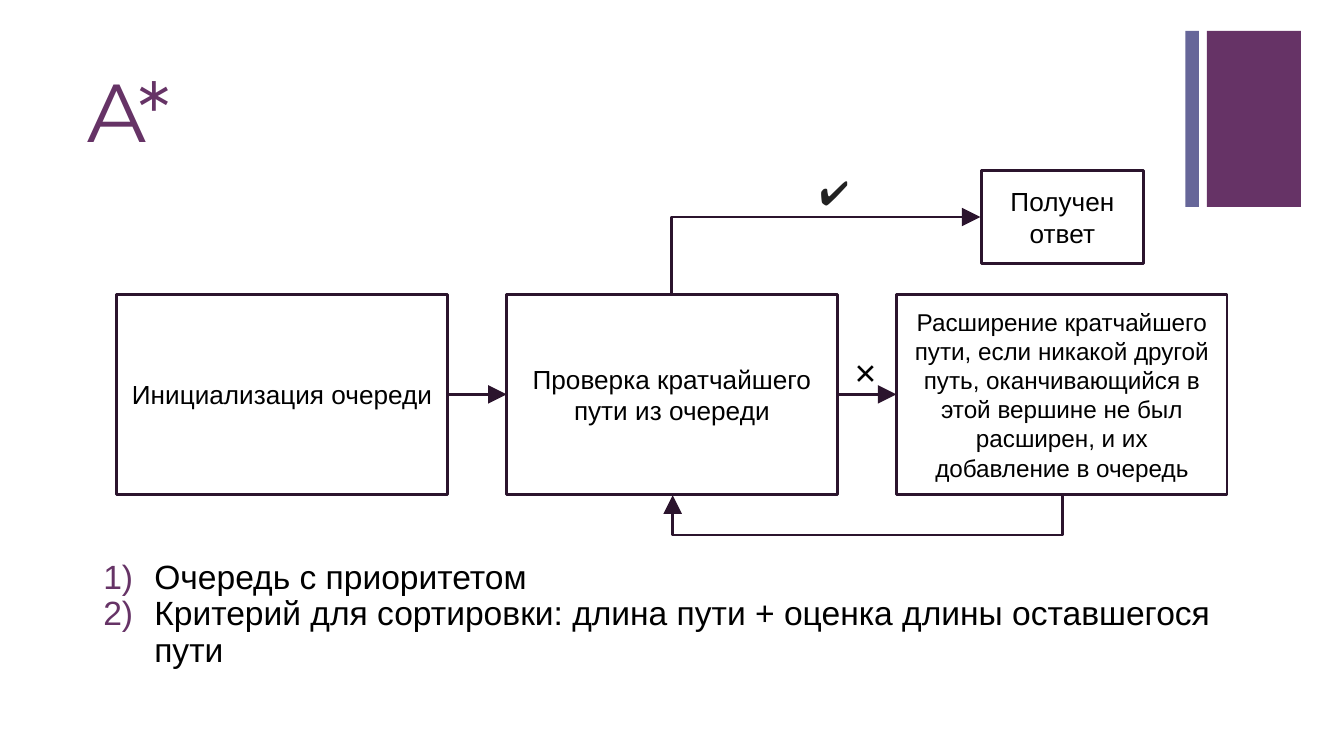
from dataclasses import dataclass
from typing import Optional

import lxml.etree
import pptx
import pptx.dml.color
import pptx.enum.shapes
import pptx.enum.text
import pptx.oxml.ns
import pptx.util

Inches = pptx.util.Inches
qn = pptx.oxml.ns.qn
CONNECTOR = pptx.enum.shapes.MSO_CONNECTOR
ANCHOR = pptx.enum.text.MSO_ANCHOR
CENTER = pptx.enum.text.PP_ALIGN.CENTER

COLORS = {"accent": "663366", "side": "666699", "outline": "2B142D",
          "text": "000000", "check": "222222", "paper": "FFFFFF"}
TOP, LEFT, BOTTOM, RIGHT = range(4)  # connection sites of a rectangle
STEP_LEFT, STEP_PITCH, STEP_TOP, STEP_WIDTH, STEP_HEIGHT = 0.87, 2.9, 2.19, 2.46, 1.49


@dataclass
class Box:
    left: float
    top: float
    width: float
    height: float
    fill: str = "paper"
    outline: Optional[str] = None
    text: str = ""
    size: int = 14


@dataclass
class Label:
    left: float
    top: float
    width: float
    height: float
    text: str
    size: int
    color: str = "text"
    font: str = "Arial"
    anchor: ANCHOR = ANCHOR.TOP
    spacing: float = 1.0


@dataclass
class Elbow:
    """Frame of a bent connector before its rotation."""
    left: float
    top: float
    width: float
    height: float
    rotation: int
    preset: str
    bend: Optional[float] = None  # position of the bend, in frame widths


def rgb(name: str) -> pptx.dml.color.RGBColor:
    return pptx.dml.color.RGBColor.from_string(COLORS[name])


def write_text(shape, text: str, size: int, color: str, font: str = "Arial") -> None:
    frame = shape.text_frame
    frame.word_wrap = True
    frame.margin_left = frame.margin_right = Inches(0.1)
    frame.margin_top = frame.margin_bottom = Inches(0.1)
    frame.text = text
    for paragraph in frame.paragraphs:
        for run in paragraph.runs:
            run.font.size = pptx.util.Pt(size)
            run.font.name = font
            run.font.color.rgb = rgb(color)


def draw_box(slide, box: Box):
    shape = slide.shapes.add_shape(
        pptx.enum.shapes.MSO_SHAPE.RECTANGLE, Inches(box.left), Inches(box.top),
        Inches(box.width), Inches(box.height))
    shape.shadow.inherit = False
    shape.fill.solid()
    shape.fill.fore_color.rgb = rgb(box.fill)
    if box.outline:
        shape.line.color.rgb = rgb(box.outline)
        shape.line.width = pptx.util.Pt(1.5)
    else:
        shape.line.fill.background()
    if box.text:
        write_text(shape, box.text, box.size, "text")
        shape.text_frame.vertical_anchor = ANCHOR.MIDDLE
        shape.text_frame.paragraphs[0].alignment = CENTER
    return shape


def draw_label(slide, label: Label):
    shape = slide.shapes.add_textbox(Inches(label.left), Inches(label.top),
                                     Inches(label.width), Inches(label.height))
    write_text(shape, label.text, label.size, label.color, label.font)
    shape.text_frame.vertical_anchor = label.anchor
    for paragraph in shape.text_frame.paragraphs:
        paragraph.line_spacing = label.spacing
    return shape


def draw_arrow(slide, start, start_site: int, end, end_site: int,
               elbow: Optional[Elbow] = None) -> None:
    kind = CONNECTOR.ELBOW if elbow else CONNECTOR.STRAIGHT
    connector = slide.shapes.add_connector(kind, 0, 0, 0, 0)
    connector.begin_connect(start, start_site)
    connector.end_connect(end, end_site)
    connector.line.color.rgb = rgb("outline")
    connector.line.width = pptx.util.Pt(1.5)
    properties = connector._element.spPr
    line = properties.find(qn("a:ln"))
    lxml.etree.SubElement(line, qn("a:tailEnd"), type="triangle", w="lg", len="lg")
    lxml.etree.SubElement(properties, qn("a:effectLst"))
    if elbow:
        connector.left, connector.top = Inches(elbow.left), Inches(elbow.top)
        connector.width, connector.height = Inches(elbow.width), Inches(elbow.height)
        transform = properties.find(qn("a:xfrm"))
        for flip in ("flipH", "flipV"):
            transform.attrib.pop(flip, None)
        transform.set("rot", str(elbow.rotation * 60000))
        geometry = properties.find(qn("a:prstGeom"))
        geometry.set("prst", elbow.preset)
        if elbow.bend is not None:
            guides = geometry.find(qn("a:avLst"))
            lxml.etree.SubElement(guides, qn("a:gd"), name="adj1",
                                  fmla=f"val {round(elbow.bend * 100000)}")


def number_paragraphs(shape) -> None:
    for paragraph in shape.text_frame.paragraphs:
        properties = paragraph._p.get_or_add_pPr()
        properties.set("marL", str(Inches(0.5)))
        properties.set("indent", str(Inches(-0.38)))
        color = lxml.etree.SubElement(properties, qn("a:buClr"))
        lxml.etree.SubElement(color, qn("a:srgbClr"), val=COLORS["accent"])
        lxml.etree.SubElement(properties, qn("a:buFont"), typeface="Arial")
        lxml.etree.SubElement(properties, qn("a:buAutoNum"), type="arabicParenR")


def main() -> None:
    presentation = pptx.Presentation()
    presentation.slide_width = Inches(10)
    presentation.slide_height = Inches(10 * 9 / 16)  # widescreen
    slide = presentation.slides.add_slide(presentation.slide_layouts[6])

    # Corner decoration and title
    draw_box(slide, Box(8.98, 0.23, 0.7, 1.31, "accent"))
    draw_box(slide, Box(8.82, 0.23, 0.1, 1.31, "side"))
    draw_label(slide, Label(0.55, 0.4, 8.26, 0.92, "A*", 44, "accent", "Montserrat",
                            ANCHOR.MIDDLE, 0.9))

    # Algorithm steps and the result
    steps = [
        ("Инициализация очереди", 14),
        ("Проверка кратчайшего пути из очереди", 14),
        ("Расширение кратчайшего пути, если никакой другой путь, оканчивающийся "
         "в этой вершине не был расширен, и их добавление в очередь", 13),
    ]
    start, check, expand = [
        draw_box(slide, Box(STEP_LEFT + index * STEP_PITCH, STEP_TOP, STEP_WIDTH,
                            STEP_HEIGHT, outline="outline", text=text, size=size))
        for index, (text, size) in enumerate(steps)]
    answer = draw_box(slide, Box(7.3, 1.27, 1.21, 0.69, outline="outline",
                                 text="Получен ответ"))

    # Transitions between steps
    draw_arrow(slide, start, RIGHT, check, LEFT)
    draw_arrow(slide, check, RIGHT, expand, LEFT)
    draw_arrow(slide, check, TOP, answer, LEFT,
               Elbow(5.86, 0.75, 0.57, 2.3, 270, "bentConnector2"))
    draw_arrow(slide, expand, BOTTOM, check, BOTTOM,
               Elbow(6.45, 2.23, 0.01, 2.9, 90, "bentConnector3", 31))

    # Outcome marks
    draw_label(slide, Label(6, 1.18, 0.57, 0.29, "✔", 18, "check"))
    draw_label(slide, Label(6.26, 2.5, 0.78, 0.38, "×", 20))

    # Numbered notes
    notes = draw_label(slide, Label(
        0.55, 4.07, 8.79, 1.03,
        "Очередь с приоритетом\n"
        "Критерий для сортировки: длина пути + оценка длины оставшегося пути",
        18, spacing=0.9))
    number_paragraphs(notes)

    presentation.save("out.pptx")


if __name__ == "__main__":
    main()
